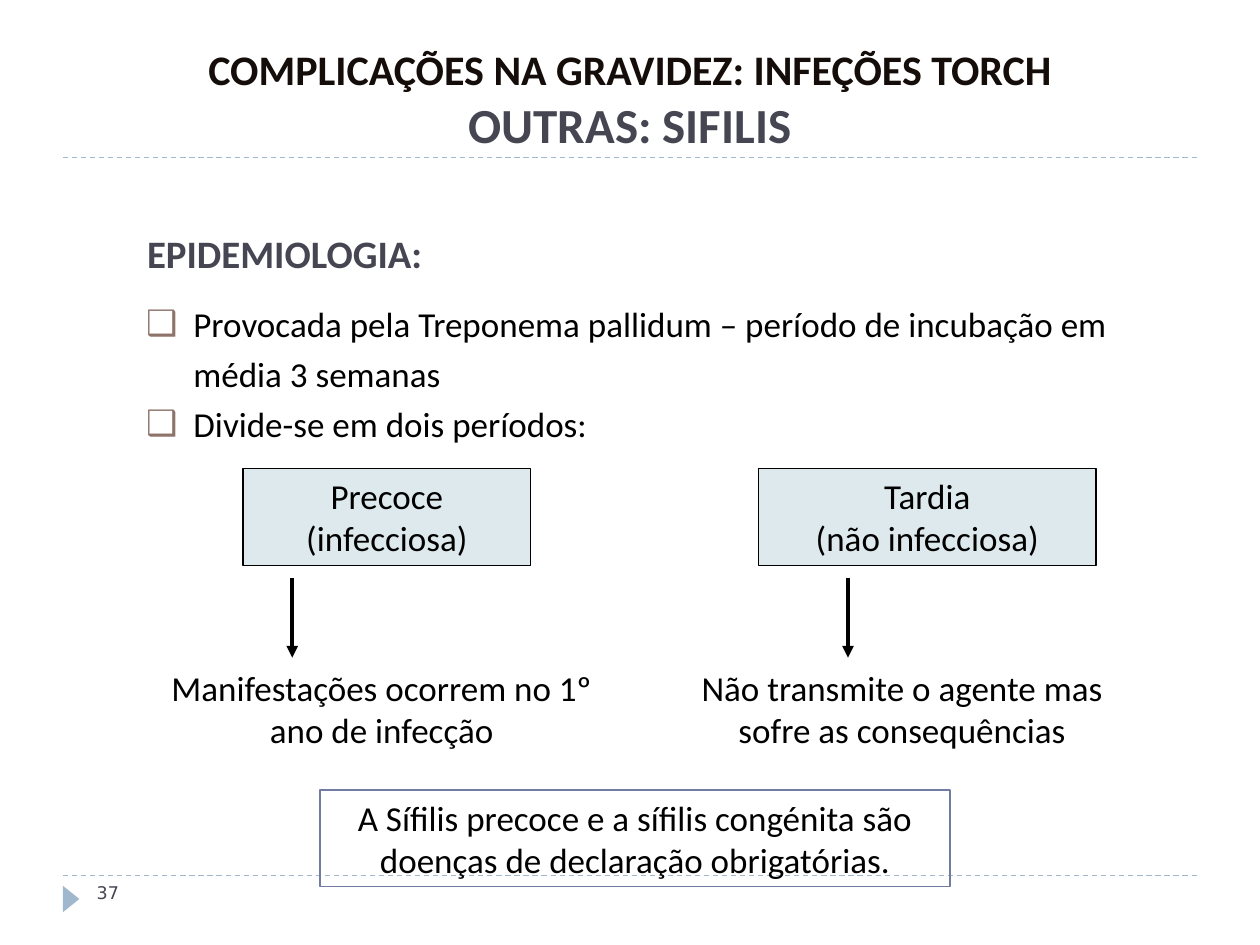
from lxml.etree import SubElement
from pptx import Presentation
from pptx.dml.color import RGBColor
from pptx.enum.dml import MSO_LINE
from pptx.enum.shapes import MSO_CONNECTOR, MSO_SHAPE
from pptx.enum.text import MSO_ANCHOR, MSO_AUTO_SIZE, PP_ALIGN
from pptx.oxml.ns import qn
from pptx.util import Pt

BLACK = RGBColor(0x00, 0x00, 0x00)
DARK_BROWN = RGBColor(0x14, 0x0D, 0x0A)
SLATE = RGBColor(0x46, 0x46, 0x53)
PALE_BLUE = RGBColor(0xDD, 0xE9, 0xEC)
SOFT_BLUE = RGBColor(0x9F, 0xB8, 0xCD)
INDIGO = RGBColor(0x72, 0x7C, 0xA3)
ROSE_BROWN = RGBColor(0x8E, 0x73, 0x6A)


class SlideBuilder:
    font = "Calibri"
    size = 20
    bullet = "❑"
    bullet_color = ROSE_BROWN
    bullet_indent = 27

    def __init__(self, slide):
        self.slide = slide

    def place(self, shape, left, top, width, height):
        shape.left, shape.top = Pt(left), Pt(top)
        shape.width, shape.height = Pt(width), Pt(height)

    def fill_text(self, shape, text, align=PP_ALIGN.CENTER, anchor=MSO_ANCHOR.TOP,
                  size=None, color=BLACK, bold=False, font=None):
        frame = shape.text_frame
        frame.text = text
        frame.word_wrap = True
        frame.auto_size = MSO_AUTO_SIZE.NONE
        frame.vertical_anchor = anchor
        for para in frame.paragraphs:
            para.alignment = align
            para.space_before = Pt(0)
            for span in para.runs:
                self.style(span, size or self.size, color, bold, font)

    def style(self, span, size, color, bold=False, font=None):
        span.font.name = font or self.font
        span.font.size = Pt(size)
        span.font.bold = bold
        span.font.color.rgb = color

    def title(self, lines, bounds):
        title = self.slide.shapes.title
        self.place(title, *bounds)
        self.fill_text(title, "\n".join(text for text, size, color in lines),
                       anchor=MSO_ANCHOR.MIDDLE)
        for para, (text, size, color) in zip(title.text_frame.paragraphs, lines):
            self.style(para.runs[0], size, color, bold=True)

    def bullets(self, items, bounds):
        body = self.slide.placeholders[1]
        self.place(body, *bounds)
        self.fill_text(body, "\n".join(items), align=PP_ALIGN.LEFT)
        for para in body.text_frame.paragraphs:
            para.line_spacing = 1.2
            properties = para._p.get_or_add_pPr()
            properties.set("marL", str(Pt(self.bullet_indent)))
            properties.set("indent", str(-Pt(self.bullet_indent)))
            color = SubElement(properties, qn("a:buClr"))
            SubElement(color, qn("a:srgbClr"), val=str(self.bullet_color))
            SubElement(properties, qn("a:buChar"), char=self.bullet)

    def label(self, text, bounds, **style):
        box = self.slide.shapes.add_textbox(*map(Pt, bounds))
        self.fill_text(box, text, **style)

    def box(self, text, bounds, line_color, line_width, fill=None):
        box = self.shape(MSO_SHAPE.RECTANGLE, bounds, fill)
        box.line.color.rgb = line_color
        box.line.width = Pt(line_width)
        self.fill_text(box, text)

    def marker(self, bounds, color):
        marker = self.shape(MSO_SHAPE.ISOSCELES_TRIANGLE, bounds, color)
        marker.rotation = 90
        marker.line.fill.background()

    def shape(self, kind, bounds, fill):
        shape = self.slide.shapes.add_shape(kind, *map(Pt, bounds))
        shape.shadow.inherit = False
        if fill is None:
            shape.fill.background()
        else:
            shape.fill.solid()
            shape.fill.fore_color.rgb = fill
        return shape

    def line(self, start, end, color, width):
        line = self.slide.shapes.add_connector(
            MSO_CONNECTOR.STRAIGHT, *map(Pt, start + end))
        line.line.color.rgb = color
        line.line.width = Pt(width)
        SubElement(line._element.spPr, qn("a:effectLst"))
        return line

    def divider(self, top):
        line = self.line((36, top), (684, top), SOFT_BLUE, 0.75)
        line.line.dash_style = MSO_LINE.DASH

    def arrow(self, left, top, bottom):
        line = self.line((left, top), (left, bottom), BLACK, 2.25)
        outline = line._element.spPr.find(qn("a:ln"))
        SubElement(outline, qn("a:tailEnd"), type="triangle")


def main():
    deck = Presentation()
    deck.slide_width, deck.slide_height = Pt(720), Pt(540)
    page = SlideBuilder(deck.slides.add_slide(deck.slide_layouts[1]))

    page.divider(500.4)
    page.divider(90)
    page.marker((33.1, 509, 15.1, 9.4), SOFT_BLUE)
    page.label("37", (48.2, 500.4, 156, 28.8), align=PP_ALIGN.LEFT,
               size=10, color=SLATE, font="DejaVu Sans")

    page.title([("COMPLICAÇÕES NA GRAVIDEZ: INFEÇÕES TORCH", 24, DARK_BROWN),
                ("OUTRAS: SIFILIS", 28, SLATE)], (36.7, 20.9, 646.6, 70.6))
    page.label("EPIDEMIOLOGIA:", (77, 128.2, 277, 33), align=PP_ALIGN.LEFT,
               anchor=MSO_ANCHOR.MIDDLE, size=22.2, color=SLATE, bold=True)
    page.bullets(["Provocada pela Treponema pallidum – período de incubação em "
                  "média 3 semanas", "Divide-se em dois períodos:"],
                 (76.3, 164.2, 572.4, 94.3))

    periods = [
        ("Precoce\n(infecciosa)", 139, 164.2, 167,
         "Manifestações ocorrem no 1º ano de infecção", 87.8, 260.6),
        ("Tardia\n(não infecciosa)", 433.4, 193, 484.6,
         "Não transmite o agente mas sofre as consequências", 382.3, 266.4),
    ]
    for name, left, width, arrow_left, effect, effect_left, effect_width in periods:
        page.box(name, (left, 267.8, width, 55.4), BLACK, 1, PALE_BLUE)
        page.arrow(arrow_left, 330.5, 375.8)
        page.label(effect, (effect_left, 377.3, effect_width, 55.4))

    page.box("A Sífilis precoce e a sífilis congénita são\n"
             "doenças de declaração obrigatórias.",
             (182.9, 451.4, 360, 55.4), INDIGO, 0.75)
    deck.save("out.pptx")


if __name__ == "__main__":
    main()
